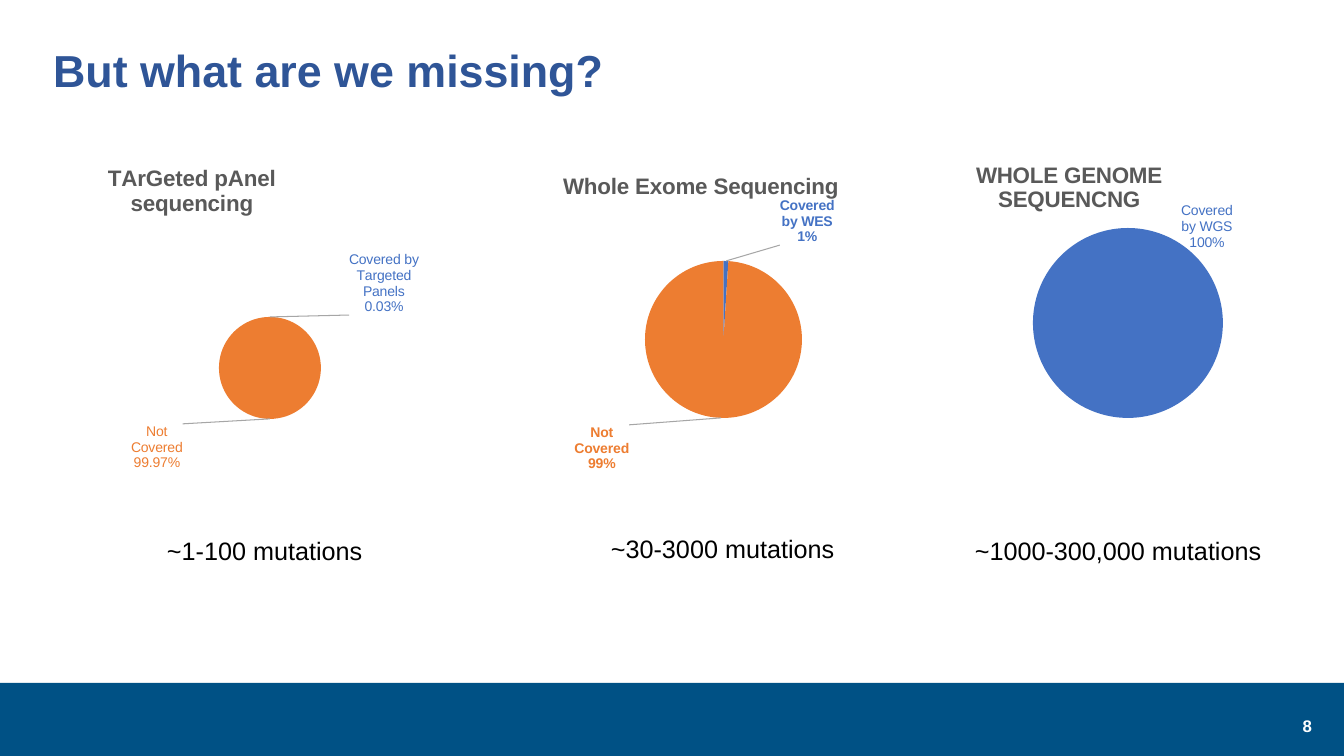
"""Build a slide comparing the genome coverage of three sequencing methods."""
from dataclasses import dataclass

from lxml import etree
from pptx import Presentation
from pptx.chart.data import CategoryChartData
from pptx.dml.color import RGBColor
from pptx.enum.chart import XL_CHART_TYPE, XL_LABEL_POSITION
from pptx.enum.shapes import MSO_SHAPE
from pptx.enum.text import MSO_ANCHOR, PP_ALIGN
from pptx.oxml import parse_xml
from pptx.oxml.ns import nsdecls, qn
from pptx.slide import Slide
from pptx.text.text import Font
from pptx.util import Emu, Pt

PIE = XL_CHART_TYPE.PIE
OUTSIDE_END = XL_LABEL_POSITION.OUTSIDE_END
RECTANGLE = MSO_SHAPE.RECTANGLE
MIDDLE = MSO_ANCHOR.MIDDLE
LEFT, CENTER, RIGHT = PP_ALIGN.LEFT, PP_ALIGN.CENTER, PP_ALIGN.RIGHT

FONT_NAME = "Arial"
BLACK = RGBColor(0x00, 0x00, 0x00)
WHITE = RGBColor(0xFF, 0xFF, 0xFF)
GRAY = RGBColor(0x59, 0x59, 0x59)
TITLE_BLUE = RGBColor(0x2F, 0x55, 0x97)
FOOTER_BLUE = RGBColor(0x00, 0x51, 0x85)
COVERED_BLUE = RGBColor(0x44, 0x72, 0xC4)
MISSED_ORANGE = RGBColor(0xED, 0x7D, 0x31)
SLICE_COLORS = (COVERED_BLUE, MISSED_ORANGE)


@dataclass(frozen=True)
class Box:
    left: int
    top: int
    width: int
    height: int


@dataclass(frozen=True)
class Coverage:
    box: Box
    title: str
    title_at: tuple[int, int]
    pie: Box
    category: str
    values: tuple[float, float]
    number_format: str
    label_shifts: tuple[tuple[int, int], ...]
    bold: bool
    mutations: str
    mutations_box: Box


COVERAGES = (
    Coverage(Box(88, 146, 365, 341), "TArGeted pAnel\nsequencing", (105, 162),
             Box(219, 317, 102, 102), "Covered by Targeted Panels", (0.03, 99.97),
             "0.00%", ((114, 4), (-113, -1)), False,
             "~1-100 mutations", Box(157, 530, 218, 40)),
    Coverage(Box(540, 144, 367, 341), "Whole Exome Sequencing", (559, 168),
             Box(645, 261, 157, 157), "Covered by WES", (1, 99),
             "0%", ((81, -10), (-119, 1)), True,
             "~30-3000 mutations", Box(601, 528, 246, 40)),
    Coverage(Box(965, 144, 326, 341), "WHOLE GENOME\nSEQUENCNG", (973, 158),
             Box(1033, 228, 190, 190), "Covered by WGS", (100, 0),
             "0%", ((79, -221),), False,
             "~1000-300,000 mutations", Box(965, 530, 309, 40)),
)


def px(length: int) -> Emu:
    """Turn pixels into EMU."""
    return Emu(round(length * 914400 / 100.8))


def place(box: Box) -> tuple[Emu, Emu, Emu, Emu]:
    """Return the position and size of a box in EMU."""
    return px(box.left), px(box.top), px(box.width), px(box.height)


def style(font: Font, size: int, color: RGBColor, bold: bool = False) -> None:
    """Format a font."""
    font.name, font.size, font.bold = FONT_NAME, Pt(size), bold
    font.color.rgb = color


def manual_layout(**values: float | str) -> etree._Element:
    """Return a chart layout element with the given settings."""
    settings = "".join(f'<c:{name} val="{value}"/>' for name, value in values.items())
    return parse_xml(f'<c:layout {nsdecls("c")}><c:manualLayout>{settings}'
                     "</c:manualLayout></c:layout>")


def set_layout(parent: etree._Element, before: str, layout: etree._Element) -> None:
    """Replace the layout of a chart part, placing it after the named child."""
    for old in parent.findall(qn("c:layout")):
        parent.remove(old)
    if before:
        parent.find(qn(before)).addnext(layout)
    else:
        parent.insert(0, layout)


def add_text(slide: Slide, box: Box, text: str, size: int, color: RGBColor,
             bold: bool = False, alignment: PP_ALIGN = LEFT) -> None:
    """Add one line of text."""
    text_frame = slide.shapes.add_textbox(*place(box)).text_frame
    text_frame.word_wrap = alignment == RIGHT
    text_frame.text = text
    paragraph = text_frame.paragraphs[0]
    paragraph.alignment = alignment
    style(paragraph.runs[0].font, size, color, bold)


def add_coverage(slide: Slide, coverage: Coverage) -> None:
    """Add a pie chart with its mutation count."""
    box, pie = coverage.box, coverage.pie
    data = CategoryChartData()
    data.categories = (coverage.category, "Not Covered")
    data.add_series("Series 1", coverage.values)
    chart = slide.shapes.add_chart(PIE, *place(box), data).chart
    chart.has_legend = False
    style(chart.font, 10, BLACK)

    title = chart.chart_title
    title.text_frame.text = coverage.title
    for paragraph in title.text_frame.paragraphs:
        paragraph.alignment = CENTER
        style(paragraph.runs[0].font, 16, GRAY, True)
    title_left, title_top = coverage.title_at
    set_layout(title._element, "c:tx", manual_layout(
        xMode="edge", yMode="edge",
        x=(title_left - box.left) / box.width, y=(title_top - box.top) / box.height))

    plot = chart.plots[0]
    plot.vary_by_categories = True
    set_layout(plot._element.getparent(), "", manual_layout(
        layoutTarget="inner", xMode="edge", yMode="edge",
        x=(pie.left - box.left) / box.width, y=(pie.top - box.top) / box.height,
        w=pie.width / box.width, h=pie.height / box.height))

    series = plot.series[0]
    labels = series.data_labels
    labels.show_value = False
    labels.show_percentage = labels.show_category_name = True
    labels.number_format = coverage.number_format
    labels.number_format_is_linked = False
    labels.position = OUTSIDE_END
    for index, color in enumerate(SLICE_COLORS):
        point = series.points[index]
        point.format.fill.solid()
        point.format.fill.fore_color.rgb = color
        style(point.data_label.font, 10, color, coverage.bold)
        point.data_label.position = OUTSIDE_END
        label = labels._element.findall(qn("c:dLbl"))[index]
        if index >= len(coverage.label_shifts):
            for child in label[1:]:
                label.remove(child)
            etree.SubElement(label, qn("c:delete")).set("val", "1")
            continue
        shift_x, shift_y = coverage.label_shifts[index]
        layout = manual_layout(x=shift_x / box.width, y=shift_y / box.height)
        set_layout(label, "c:idx", layout)
        layout.addnext(parse_xml(f'<c:numFmt {nsdecls("c")} sourceLinked="0" '
                                 f'formatCode="{coverage.number_format}"/>'))
        for name, value in (("showVal", "0"), ("showCatName", "1"), ("showPercent", "1")):
            label.find(qn(f"c:{name}")).set("val", value)
        etree.SubElement(label, qn("c:separator")).text = "\n"
    labels._element.append(parse_xml(
        f'<c:leaderLines {nsdecls("c", "a")}><c:spPr><a:ln w="9525"><a:solidFill>'
        '<a:srgbClr val="A6A6A6"/></a:solidFill></a:ln></c:spPr></c:leaderLines>'))
    add_text(slide, coverage.mutations_box, coverage.mutations, 18, BLACK)


def main() -> None:
    """Build and save the presentation."""
    presentation = Presentation()
    presentation.slide_width, presentation.slide_height = px(1344), px(756)
    slide = presentation.slides.add_slide(presentation.slide_layouts[5])

    footer = slide.shapes.add_shape(RECTANGLE, *place(Box(0, 683, 1344, 80)))
    footer.shadow.inherit = False
    footer.fill.solid()
    footer.fill.fore_color.rgb = FOOTER_BLUE
    footer.line.fill.background()
    add_text(slide, Box(1020, 711, 302, 40), "8", 12, WHITE, True, RIGHT)

    title = slide.shapes.title
    title.left, title.top, title.width, title.height = place(Box(43, 0, 1159, 146))
    title.text_frame.text = "But what are we missing?"
    title.text_frame.vertical_anchor = MIDDLE
    paragraph = title.text_frame.paragraphs[0]
    paragraph.alignment, paragraph.line_spacing = LEFT, 0.9
    style(paragraph.runs[0].font, 32, TITLE_BLUE, True)

    for coverage in COVERAGES:
        add_coverage(slide, coverage)
    presentation.save("out.pptx")


if __name__ == "__main__":
    main()
